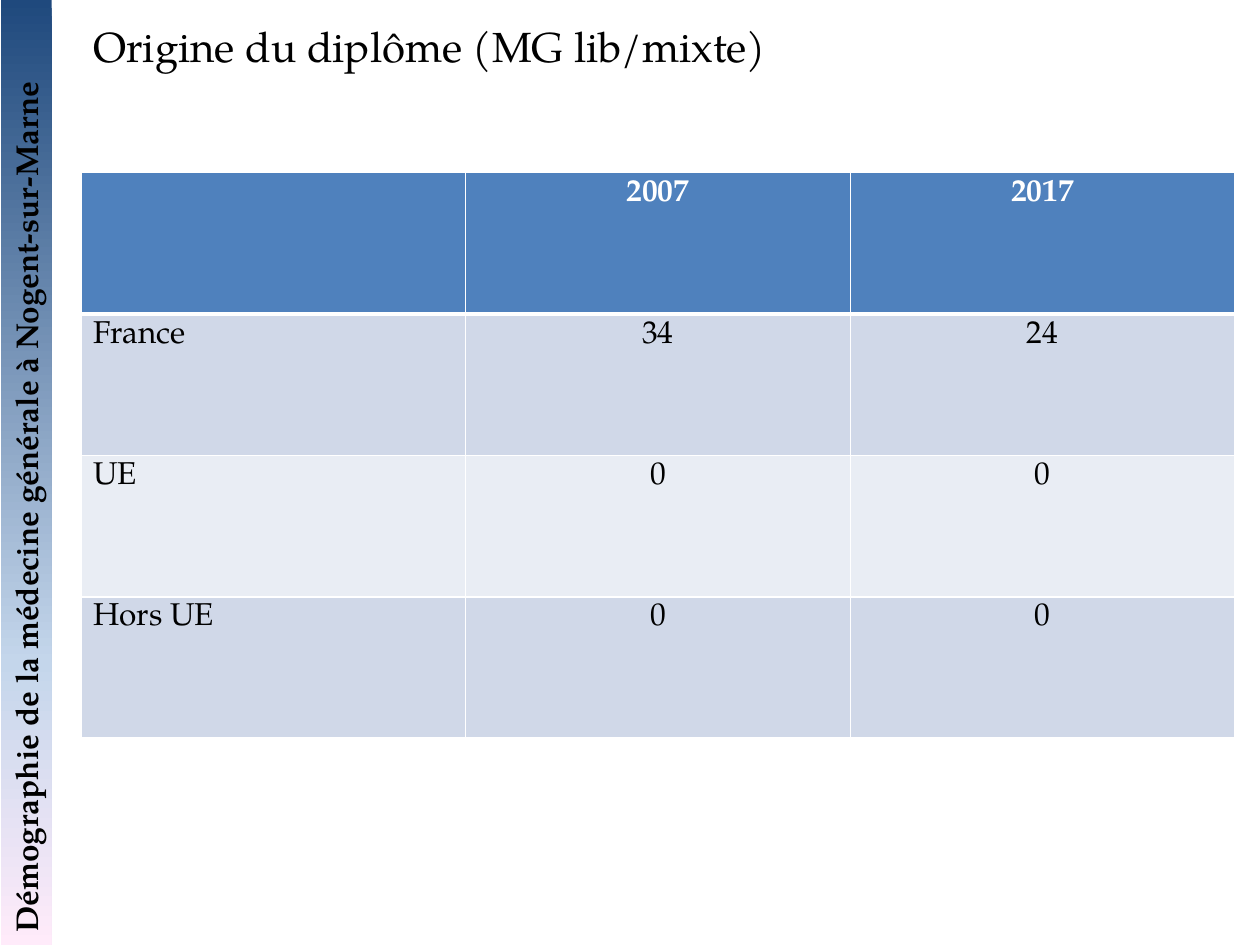
from copy import deepcopy

from pptx import Presentation
from pptx.dml.color import RGBColor
from pptx.enum.shapes import MSO_SHAPE
from pptx.enum.text import MSO_ANCHOR, MSO_AUTO_SIZE, PP_ALIGN as Align
from pptx.oxml import parse_xml
from pptx.oxml.ns import nsdecls, qn
from pptx.util import Cm, Pt

FONT = "TeX Gyre Pagella"
BLACK = RGBColor(0x00, 0x00, 0x00)
WHITE = RGBColor(0xFF, 0xFF, 0xFF)
HEADER_BLUE = RGBColor(0x4F, 0x81, 0xBD)
ROW_DARK = RGBColor(0xD0, 0xD8, 0xE8)
ROW_LIGHT = RGBColor(0xE9, 0xED, 0xF4)
BAND_STOPS = [
    (0, RGBColor(0x1F, 0x49, 0x7D)),
    (0.7, RGBColor(0xC4, 0xD6, 0xEB)),
    (1, RGBColor(0xFF, 0xEB, 0xFA)),
]

ROWS = [
    ("", "2007", "2017"),
    ("France", "34", "24"),
    ("UE", "0", "0"),
    ("Hors UE", "0", "0"),
]


def write_text(frame, text, size=18, bold=False, color=BLACK, align=Align.LEFT):
    paragraph = frame.paragraphs[0]
    paragraph.alignment = align
    run = paragraph.add_run()
    run.text = text
    font = run.font
    font.name, font.size, font.bold = FONT, Pt(size), bold
    font.color.rgb = color


def add_title(slide, text):
    title = slide.shapes.title
    title.left, title.top = Cm(1.63), Cm(0.28)
    title.width, title.height = Cm(14.12), Cm(1.3)
    frame = title.text_frame
    frame.word_wrap = False
    frame.auto_size = MSO_AUTO_SIZE.SHAPE_TO_FIT_TEXT
    frame.vertical_anchor = MSO_ANCHOR.TOP
    write_text(frame, text, size=24)


def set_borders(cell, **widths):
    """Draw white borders; widths in points, keyed by side L, R, T, B."""
    properties = cell._tc.get_or_add_tcPr()
    for side, width in widths.items():
        properties.append(parse_xml(
            f'<a:ln{side} {nsdecls("a")} w="{Pt(width)}"><a:solidFill>'
            f'<a:srgbClr val="{WHITE}"/></a:solidFill></a:ln{side}>'))


def add_table(slide, rows):
    table = slide.shapes.add_table(
        len(rows), len(rows[0]), Cm(1.63), Cm(3.48), Cm(23.27), Cm(11.4)).table
    for row_index, row in enumerate(rows):
        header = row_index == 0
        if header:
            fill_color = HEADER_BLUE
        else:
            fill_color = ROW_DARK if row_index % 2 else ROW_LIGHT
        for column_index, text in enumerate(row):
            cell = table.cell(row_index, column_index)
            set_borders(cell, L=1, R=1, T=3 if row_index == 1 else 1,
                        B=3 if header else 1)
            cell.fill.solid()
            cell.fill.fore_color.rgb = fill_color
            if text:
                write_text(cell.text_frame, text, bold=header,
                           color=WHITE if header else BLACK,
                           align=Align.CENTER if column_index else Align.LEFT)


def fill_gradient(shape, stops, angle):
    shape.fill.gradient()
    shape.fill.gradient_angle = angle
    stop_list = shape._element.spPr.find(qn("a:gradFill")).find(qn("a:gsLst"))
    while len(stop_list) < len(stops):
        stop_list.append(deepcopy(stop_list[-1]))
    for stop, (position, color) in zip(shape.fill.gradient_stops, stops):
        stop.position = position
        stop.color.rgb = color


def add_side_band(slide, text):
    """Add the gradient band on the left edge, with text reading upwards."""
    band = slide.shapes.add_shape(
        MSO_SHAPE.RECTANGLE, Cm(-8.99), Cm(9.02), Cm(19.05), Cm(1.02))
    band.rotation = 270
    band.shadow.inherit = False
    band.line.fill.background()
    fill_gradient(band, BAND_STOPS, angle=180)
    frame = band.text_frame
    frame.word_wrap = True
    frame.auto_size = MSO_AUTO_SIZE.SHAPE_TO_FIT_TEXT
    frame.vertical_anchor = MSO_ANCHOR.TOP
    write_text(frame, text, bold=True)


def main():
    presentation = Presentation()
    presentation.slide_width, presentation.slide_height = Cm(25.4), Cm(19.05)
    slide = presentation.slides.add_slide(presentation.slide_layouts[5])
    add_title(slide, "Origine du diplôme (MG lib/mixte)")
    add_table(slide, ROWS)
    add_side_band(slide, "Démographie de la médecine générale à Nogent-sur-Marne")
    presentation.save("out.pptx")


if __name__ == "__main__":
    main()
